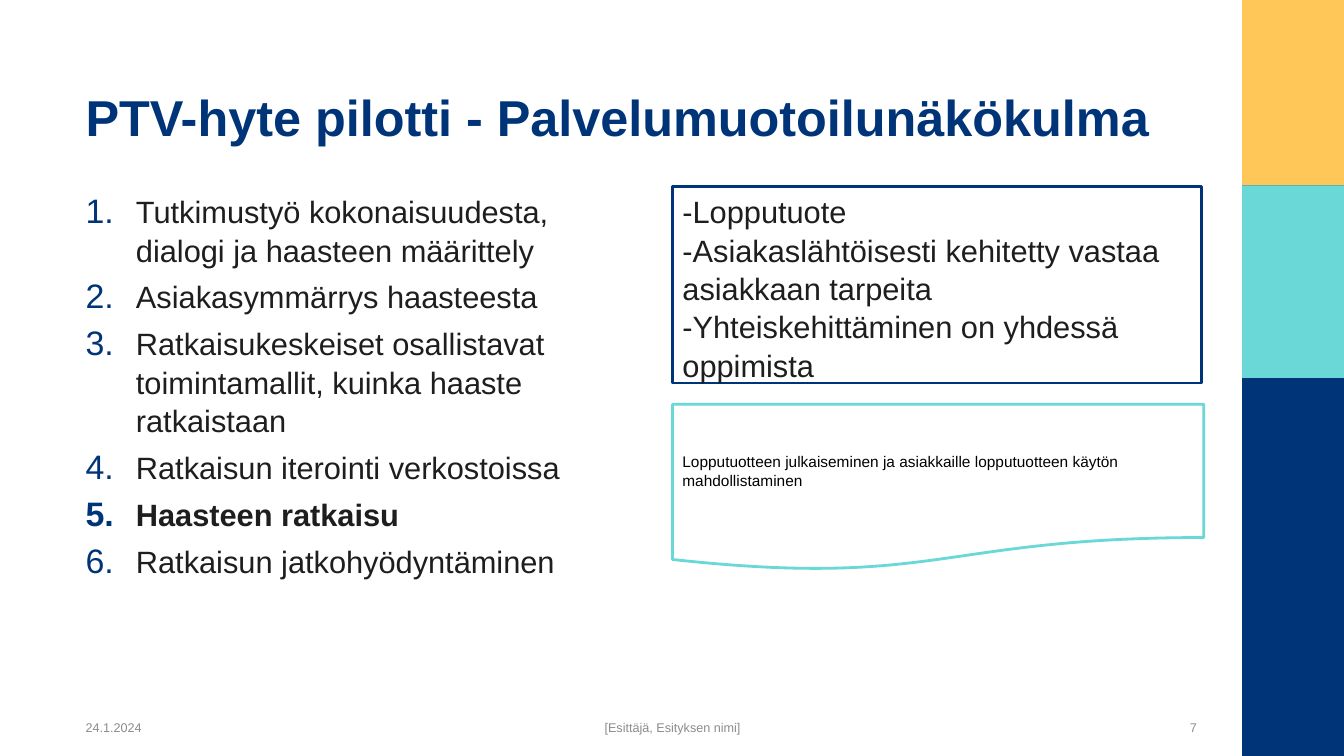
from dataclasses import dataclass

from lxml import etree
from pptx import Presentation
from pptx.dml.color import RGBColor
from pptx.enum import shapes, text
from pptx.oxml import ns
from pptx.util import Inches, Pt

NAVY = RGBColor(0x00, 0x34, 0x79)
YELLOW = RGBColor(0xFF, 0xC6, 0x58)
TURQUOISE = RGBColor(0x69, 0xD8, 0xD7)
WHITE = RGBColor(0xFF, 0xFF, 0xFF)
INK = RGBColor(0x1E, 0x1E, 0x1E)
BLACK = RGBColor(0x00, 0x00, 0x00)
GREY = RGBColor(0x8C, 0x8C, 0x8C)

FONT = "Arial"
BODY_SPACING = 1.04
LEFT, MIDDLE, TOP = 0.75, text.MSO_ANCHOR.MIDDLE, text.MSO_ANCHOR.TOP
PRESET = shapes.MSO_SHAPE


@dataclass(frozen=True)
class Box:
    left: float
    top: float
    width: float
    height: float

    def lengths(self):
        return [Inches(v) for v in (self.left, self.top, self.width, self.height)]


@dataclass(frozen=True)
class Style:
    size: float
    color: RGBColor
    bold: bool = False
    align: text.PP_ALIGN = text.PP_ALIGN.LEFT
    anchor: text.MSO_ANCHOR = TOP
    spacing: float = 1.0
    before: float = 0
    numbered: bool = False


@dataclass(frozen=True)
class Label:
    box: Box
    lines: tuple[str, ...]
    style: Style
    bold_line: str = ""


@dataclass(frozen=True)
class Panel:
    preset: shapes.MSO_SHAPE
    line: RGBColor
    label: Label


@dataclass(frozen=True)
class Band:
    top: float
    height: float
    color: RGBColor


BANDS = (
    Band(0, 7.5, NAVY),
    Band(0, 1.84, YELLOW),
    Band(1.84, 1.91, TURQUOISE),
)

TITLE = Label(
    Box(LEFT, 0.16, 11.22, 1.34),
    ("PTV-hyte pilotti - Palvelumuotoilunäkökulma",),
    Style(36, NAVY, bold=True, anchor=text.MSO_ANCHOR.BOTTOM),
)

STEPS = Label(
    Box(LEFT, 1.85, 5.51, 5.04),
    (
        "Tutkimustyö kokonaisuudesta, dialogi ja haasteen määrittely",
        "Asiakasymmärrys haasteesta",
        "Ratkaisukeskeiset osallistavat toimintamallit, kuinka haaste ratkaistaan",
        "Ratkaisun iterointi verkostoissa",
        "Haasteen ratkaisu",
        "Ratkaisun jatkohyödyntäminen",
    ),
    Style(22, INK, spacing=BODY_SPACING, before=6, numbered=True),
    bold_line="Haasteen ratkaisu",
)


def footer(left: float, width: float, words: str, align: text.PP_ALIGN) -> Label:
    style = Style(9, GREY, align=align, anchor=MIDDLE, spacing=0.9)
    return Label(Box(left, 7.11, width, 0.24), (words,), style)


FOOTERS = (
    footer(LEFT, 1.65, "24.1.2024", text.PP_ALIGN.LEFT),
    footer(3.49, 6.36, "[Esittäjä, Esityksen nimi]", text.PP_ALIGN.CENTER),
    footer(11.06, 0.91, "7", text.PP_ALIGN.RIGHT),
)

PANELS = (
    Panel(PRESET.RECTANGLE, NAVY, Label(
        Box(6.67, 1.85, 5.25, 1.95),
        (
            "-Lopputuote",
            "-Asiakaslähtöisesti kehitetty vastaa asiakkaan tarpeita",
            "-Yhteiskehittäminen on yhdessä oppimista",
        ),
        Style(22, INK, spacing=BODY_SPACING),
    )),
    Panel(PRESET.FLOWCHART_DOCUMENT, TURQUOISE, Label(
        Box(6.67, 4.01, 5.27, 1.65),
        ("Lopputuotteen julkaiseminen ja asiakkaille lopputuotteen käytön "
         "mahdollistaminen",),
        Style(11, BLACK, anchor=MIDDLE),
    )),
)


def add_number(paragraph) -> None:
    """Give the paragraph a hanging automatic number."""
    props = paragraph._p.get_or_add_pPr()
    props.set("marL", str(Inches(0.5)))
    props.set("indent", str(-Inches(0.5)))
    color = etree.SubElement(props, ns.qn("a:buClr"))
    etree.SubElement(color, ns.qn("a:srgbClr"), val=str(NAVY))
    etree.SubElement(props, ns.qn("a:buSzPct"), val="110000")
    etree.SubElement(props, ns.qn("a:buFont"), typeface=FONT)
    etree.SubElement(props, ns.qn("a:buAutoNum"), type="arabicPeriod")


def write(frame, label: Label) -> None:
    style = label.style
    frame.word_wrap = True
    frame.vertical_anchor = style.anchor
    for index, line in enumerate(label.lines):
        paragraph = frame.add_paragraph() if index else frame.paragraphs[0]
        if style.numbered:
            add_number(paragraph)
        paragraph.alignment = style.align
        paragraph.line_spacing = style.spacing
        paragraph.space_before = Pt(style.before if index else 0)
        run = paragraph.add_run()
        run.text = line
        run.font.name = FONT
        run.font.size = Pt(style.size)
        run.font.bold = style.bold or line == label.bold_line
        run.font.color.rgb = style.color


def add_label(slide, label: Label) -> None:
    write(slide.shapes.add_textbox(*label.box.lengths()).text_frame, label)


def add_filled(slide, preset: shapes.MSO_SHAPE, box: Box, fill: RGBColor):
    shape = slide.shapes.add_shape(preset, *box.lengths())
    shape.shadow.inherit = False
    shape.fill.solid()
    shape.fill.fore_color.rgb = fill
    shape.line.fill.background()
    return shape


def add_panel(slide, panel: Panel) -> None:
    shape = add_filled(slide, panel.preset, panel.label.box, WHITE)
    shape.line.color.rgb = panel.line
    shape.line.width = Pt(2)
    write(shape.text_frame, panel.label)


def main() -> None:
    deck = Presentation()
    deck.slide_width, deck.slide_height = Inches(13.33), Inches(7.5)
    slide = deck.slides.add_slide(deck.slide_layouts[6])
    for band in BANDS:
        box = Box(12.32, band.top, 1.01, band.height)
        add_filled(slide, PRESET.RECTANGLE, box, band.color)
    for label in (STEPS, *FOOTERS, TITLE):
        add_label(slide, label)
    for panel in PANELS:
        add_panel(slide, panel)
    deck.save("out.pptx")


if __name__ == "__main__":
    main()
